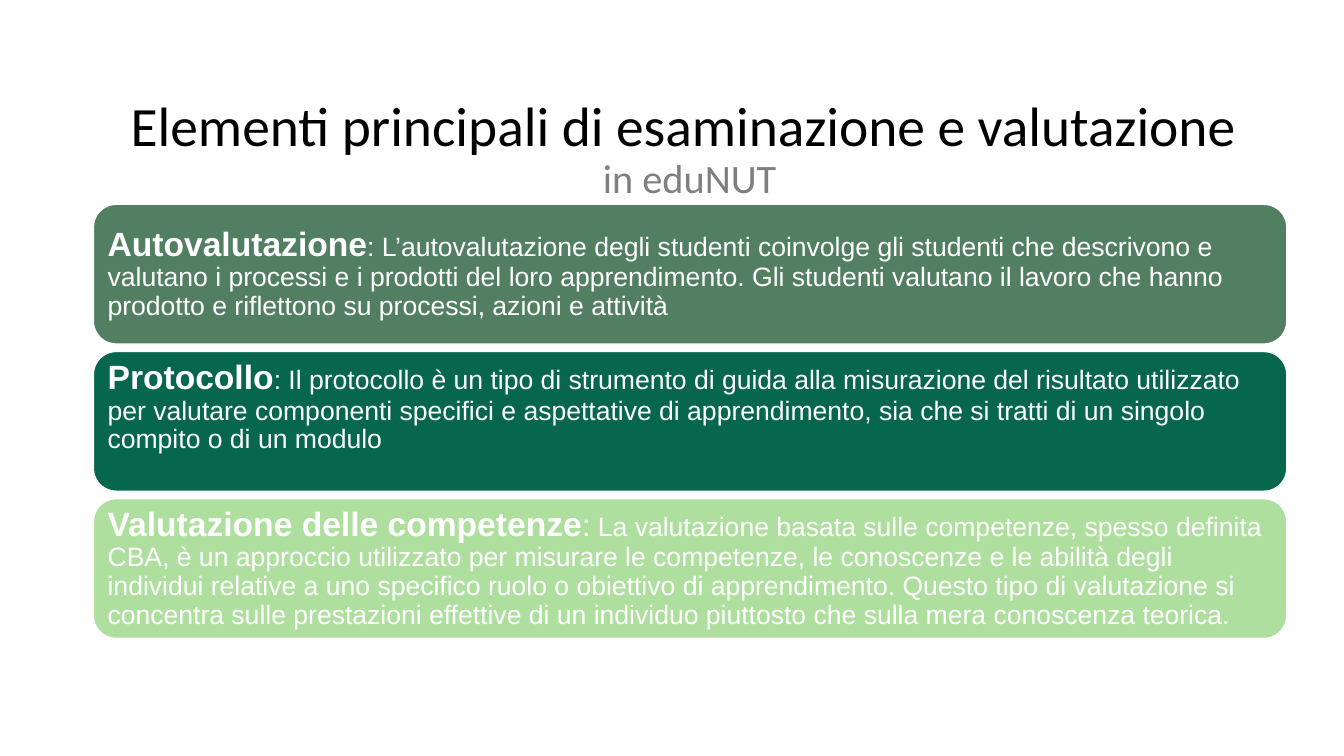
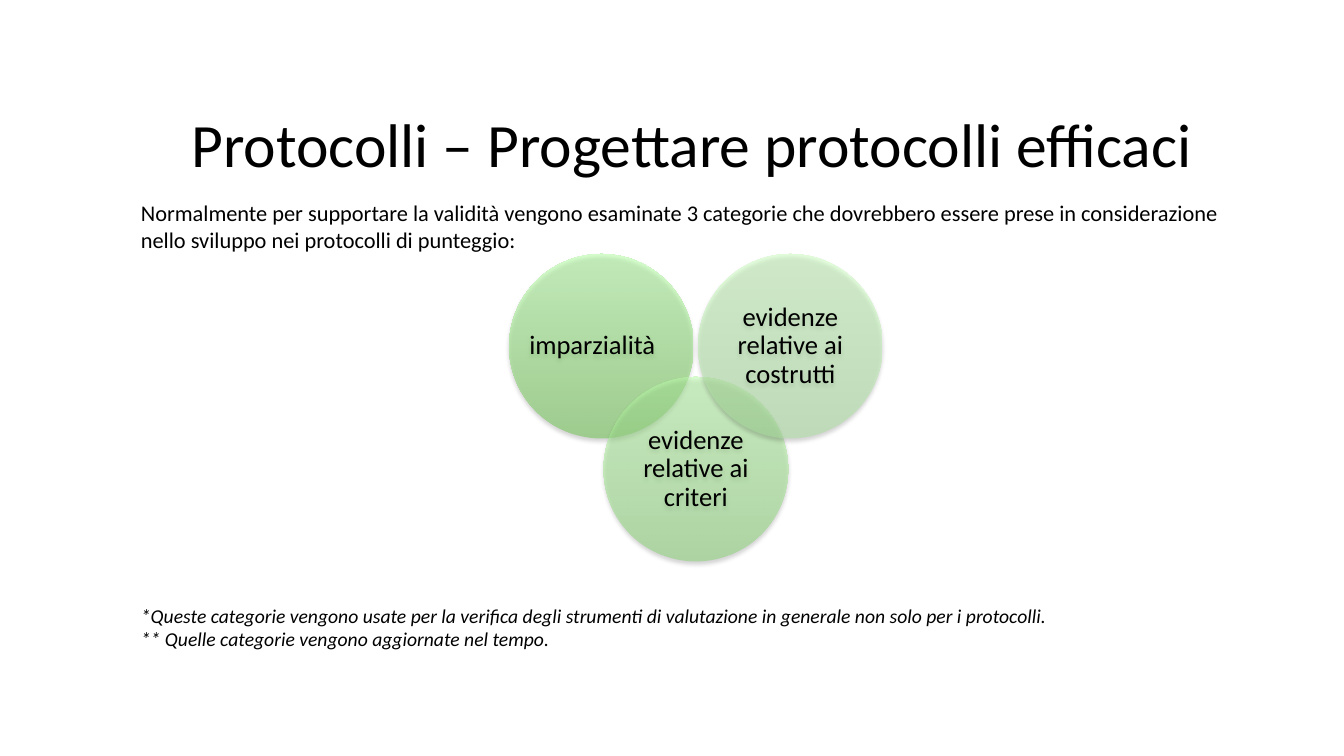
import pptx
import pptx.dml.color
import pptx.enum.shapes
import pptx.enum.text
import pptx.oxml.ns
import pptx.util
from lxml import etree

hue = pptx.dml.color.RGBColor.from_string
qn = pptx.oxml.ns.qn
Pt = pptx.util.Pt
Shape = pptx.enum.shapes.MSO_SHAPE
Align = pptx.enum.text.PP_ALIGN
Anchor = pptx.enum.text.MSO_ANCHOR

deck = pptx.Presentation()
deck.slide_width = pptx.util.Inches(13.33)
deck.slide_height = pptx.util.Inches(7.5)


def box(x, y, w, h):
    """Turn percentages of the slide's size into left, top, width, height."""
    col, row = deck.slide_width / 100, deck.slide_height / 100
    return [round(n) for n in (x * col, y * row, w * col, h * row)]


def write(frame, *paras, size=19, font="Calibri", color="000000", bold=False,
          italic=False, align=Align.LEFT, anchor=Anchor.MIDDLE, space=0.9,
          wrap=True, pad=(0.1, 0.05, 0.1, 0.05)):
    """Each paragraph is a list of (text, changes) runs; None breaks the line."""
    frame.auto_size = pptx.enum.text.MSO_AUTO_SIZE.NONE
    frame.word_wrap = wrap
    frame.vertical_anchor = anchor
    (frame.margin_left, frame.margin_top,
     frame.margin_right, frame.margin_bottom) = map(pptx.util.Inches, pad)
    for i, runs in enumerate(paras):
        para = frame.add_paragraph() if i else frame.paragraphs[0]
        para.alignment, para.line_spacing = align, space
        for item in runs:
            if item is None:
                para.add_line_break()
                continue
            text, diff = item
            look = {"size": size, "color": color, "bold": bold, **diff}
            run = para.add_run()
            run.text = text
            run.font.name, run.font.size = font, Pt(look["size"])
            run.font.bold, run.font.italic = look["bold"], italic
            run.font.color.rgb = hue(look["color"])


heads = [
    ((8.18, 10.93), 39.6, 0.1,
     [("Elementi principali di esaminazione e valutazione ", {}), None,
      ("in eduNUT", {"size": 28.8, "color": "7F7F7F"})]),
    ((7.65, 10.53), 44, 0.29,
     [("Protocolli – Progettare protocolli efficaci", {})]),
]
slides = []
for spot, size, left, runs in heads:
    slide = deck.slides.add_slide(deck.slide_layouts[5])
    title = slide.shapes.title
    title.left, title.top, title.width, title.height = box(*spot, 86.27, 18)
    write(title.text_frame, runs, size=size, align=Align.CENTER,
          pad=(left, 0.05, 0.1, 0.05))
    slides.append(slide)
first, second = slides

# Slide 1: three stacked bands
bands = [
    ("527F62", 0.08, "Autovalutazione", 19,
     " L’autovalutazione degli studenti coinvolge gli studenti che descrivono e "
     "valutano i processi e i prodotti del loro apprendimento. Gli studenti "
     "valutano il lavoro che hanno prodotto e riflettono su processi, azioni e "
     "attività"),
    ("07674D", 0.35, "Protocollo", 19,
     " Il protocollo è un tipo di strumento di guida alla misurazione del "
     "risultato utilizzato per valutare componenti specifici e aspettative di "
     "apprendimento, sia che si tratti di un singolo compito o di un modulo"),
    ("AFDF9F", 0.08, "Valutazione delle competenze", 22,
     " La valutazione basata sulle competenze, spesso definita CBA, è un "
     "approccio utilizzato per misurare le competenze, le conoscenze e le "
     "abilità degli individui relative a uno specifico ruolo o obiettivo di "
     "apprendimento. Questo tipo di valutazione si concentra sulle prestazioni "
     "effettive di un individuo piuttosto che sulla mera conoscenza teorica."),
]
for i, (fill, foot, name, colon, text) in enumerate(bands):
    band = first.shapes.add_shape(Shape.ROUNDED_RECTANGLE,
                                  *box(6.9, 26.93 + i * 19.47, 88.9, 18.67))
    band.shadow.inherit = False
    band.fill.solid()
    band.fill.fore_color.rgb = hue(fill)
    band.line.color.rgb = hue("FFFFFF")
    band.line.width = Pt(2)
    write(band.text_frame,
          [(name, {"size": 24, "bold": True}), (":", {"size": colon}), (text, {})],
          font="Arial", color="FFFFFF", pad=(0.08, 0.08, 0.08, foot))

# Slide 2: lead, three overlapping circles, notes
lead = ["Normalmente per supportare la validità vengono esaminate 3 categorie che "
        "dovrebbero essere prese in considerazione nello sviluppo nei protocolli "
        "di punteggio:"]
notes = ["*Queste categorie vengono usate per la verifica degli strumenti di "
         "valutazione in generale non solo per i protocolli.",
         "** Quelle categorie vengono aggiornate nel tempo."]
for top, high, size, slant, lines in ((25.73, 11.73, 16, False, lead),
                                      (79.2, 10.8, 14, True, notes)):
    area = second.shapes.add_textbox(*box(9.75, top, 84.17, high))
    write(area.text_frame, *[[(line, {})] for line in lines], size=size,
          italic=slant, anchor=Anchor.TOP, space=1.0)

rings = [
    (0, 0, "69C449", "B0FF9F", "imparzialità", False, 0.26),
    (1, 1, "87D372", "BCFFAA", "evidenze relative ai criteri", True, 0.08),
    (2, 0, "ABE19E", "CBFFBD", "evidenze relative ai costrutti", True, 0.08),
]
for col, row, dark, light, text, wrap, right in rings:
    ring = second.shapes.add_shape(
        Shape.OVAL, *box(37.88 + col * 7.03, 33.6 + row * 16.27, 13.73, 24.4))
    ring.line.fill.background()
    ring.fill.gradient()
    ring.fill.gradient_angle = 90
    for stop, tone in zip(ring.fill.gradient_stops, (dark, light)):
        stop.color.rgb = hue(tone)
    props = ring._element.spPr
    for tone in props.iter(qn("a:srgbClr")):
        etree.SubElement(tone, qn("a:alpha"), val="49000")
    ring.shadow.inherit = False
    shade = etree.SubElement(props.find(qn("a:effectLst")), qn("a:outerShdw"),
                             blurRad=str(Pt(3.1)), dist=str(Pt(1.8)),
                             dir="5400000", rotWithShape="0")
    tone = etree.SubElement(shade, qn("a:srgbClr"), val="000000")
    etree.SubElement(tone, qn("a:alpha"), val="35000")
    write(ring.text_frame, [(text, {})], align=Align.CENTER, wrap=wrap,
          pad=(0.08, 0.08, right, 0.08))

deck.save("out.pptx")
